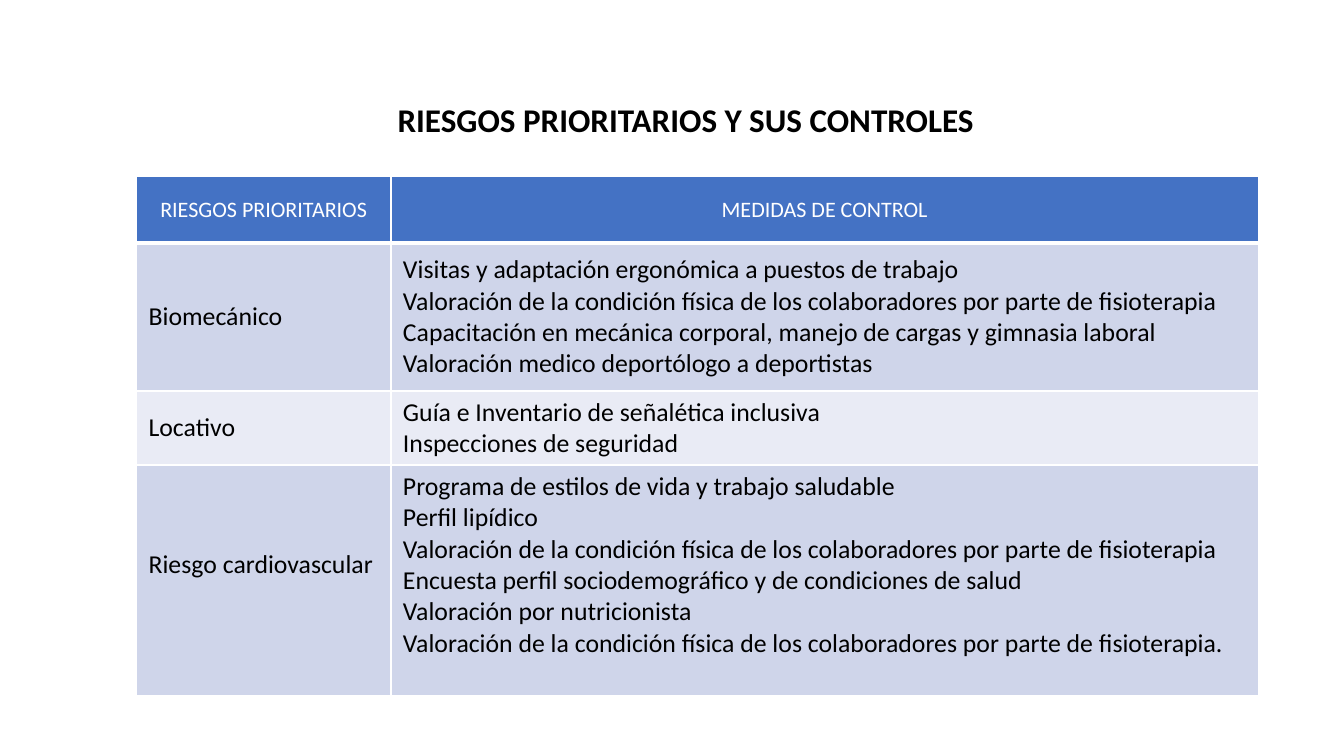
from pptx import Presentation
from pptx.dml.color import RGBColor
from pptx.enum.text import MSO_ANCHOR as Anchor, MSO_AUTO_SIZE as AutoSize, PP_ALIGN as Align
from pptx.oxml import parse_xml
from pptx.oxml.ns import nsdecls
from pptx.util import Cm, Pt

WHITE = RGBColor(0xFF, 0xFF, 0xFF)
BLACK = RGBColor(0, 0, 0)
BLUE = RGBColor(0x44, 0x72, 0xC4)
BAND_DARK = RGBColor(0xCF, 0xD5, 0xEA)
BAND_LIGHT = RGBColor(0xE9, 0xEB, 0xF5)

FITNESS = "Valoración de la condición física de los colaboradores por parte de fisioterapia"
RISKS = [
    ("RIESGOS PRIORITARIOS", ["MEDIDAS DE CONTROL"]),
    ("Biomecánico", [
        "Visitas y adaptación ergonómica a puestos de trabajo",
        FITNESS,
        "Capacitación en mecánica corporal, manejo de cargas y gimnasia laboral",
        "Valoración medico deportólogo a deportistas",
    ]),
    ("Locativo", [
        "Guía e Inventario de señalética inclusiva",
        "Inspecciones de seguridad",
    ]),
    ("Riesgo cardiovascular", [
        "Programa de estilos de vida y trabajo saludable",
        "Perfil lipídico",
        FITNESS,
        "Encuesta perfil sociodemográfico y de condiciones de salud",
        "Valoración por nutricionista",
        FITNESS + ".",
    ]),
]
COLUMN_WIDTHS = [4.88, 16.64]
ROW_HEIGHTS = [1.28, 2.84, 1.42, 4.42]
LAST_ROW_BOTTOM = 0.71


class RiskPage:
    def __init__(self, deck, font_name):
        self.page = deck.slides.add_slide(deck.slide_layouts[5])
        self.font_name = font_name

    def fill_text(self, frame, lines, size, color, align, bold=False):
        frame.text = "\n".join(lines)
        for para in frame.paragraphs:
            para.alignment = align
            font = para.font
            font.name, font.size, font.bold = self.font_name, Pt(size), bold
            font.color.rgb = color

    def title(self, text, left, top, width, height):
        box = self.page.shapes.title
        box.left, box.top, box.width, box.height = map(Cm, (left, top, width, height))
        frame = box.text_frame
        frame.word_wrap = True
        frame.auto_size = AutoSize.NONE
        frame.vertical_anchor = Anchor.MIDDLE
        self.fill_text(frame, [text], 18, BLACK, Align.CENTER, True)

    def borders(self, cell, bottom):
        properties = cell._tc.get_or_add_tcPr()
        for side, points in (("L", 1), ("R", 1), ("T", 1), ("B", bottom)):
            properties.append(parse_xml(
                f'<a:ln{side} {nsdecls("a")} w="{Pt(points)}"><a:solidFill>'
                f'<a:srgbClr val="{WHITE}"/></a:solidFill></a:ln{side}>'))

    def cell(self, cell, lines, header, fill, bottom_margin):
        cell.vertical_anchor = Anchor.MIDDLE
        cell.margin_left = cell.margin_right = Cm(0.23)
        cell.margin_top, cell.margin_bottom = Cm(0.11), Cm(bottom_margin)
        self.borders(cell, 3 if header else 1)
        cell.fill.solid()
        cell.fill.fore_color.rgb = fill
        if header:
            self.fill_text(cell.text_frame, lines, 12, WHITE, Align.CENTER)
        else:
            self.fill_text(cell.text_frame, lines, 14, BLACK, Align.LEFT)

    def table(self, risks, left, top):
        table = self.page.shapes.add_table(
            len(risks), len(COLUMN_WIDTHS), Cm(left), Cm(top),
            Cm(sum(COLUMN_WIDTHS)), Cm(sum(ROW_HEIGHTS))).table
        for column, width in zip(table.columns, COLUMN_WIDTHS):
            column.width = Cm(width)
        for index, (risk, controls) in enumerate(risks):
            table.rows[index].height = Cm(ROW_HEIGHTS[index])
            header = index == 0
            fill = BLUE if header else BAND_DARK if index % 2 else BAND_LIGHT
            bottom_margin = LAST_ROW_BOTTOM if index == len(risks) - 1 else 0.11
            for column, lines in enumerate(([risk], controls)):
                self.cell(table.cell(index, column), lines, header, fill, bottom_margin)


def main():
    deck = Presentation()
    deck.slide_width, deck.slide_height = Cm(25.78), Cm(14.5)
    page = RiskPage(deck, "Calibri")
    page.title("RIESGOS PRIORITARIOS Y SUS CONTROLES", 4.06, 1.78, 18.19, 1.02)
    page.table(RISKS, 2.62, 3.38)
    deck.save("out.pptx")


if __name__ == "__main__":
    main()
